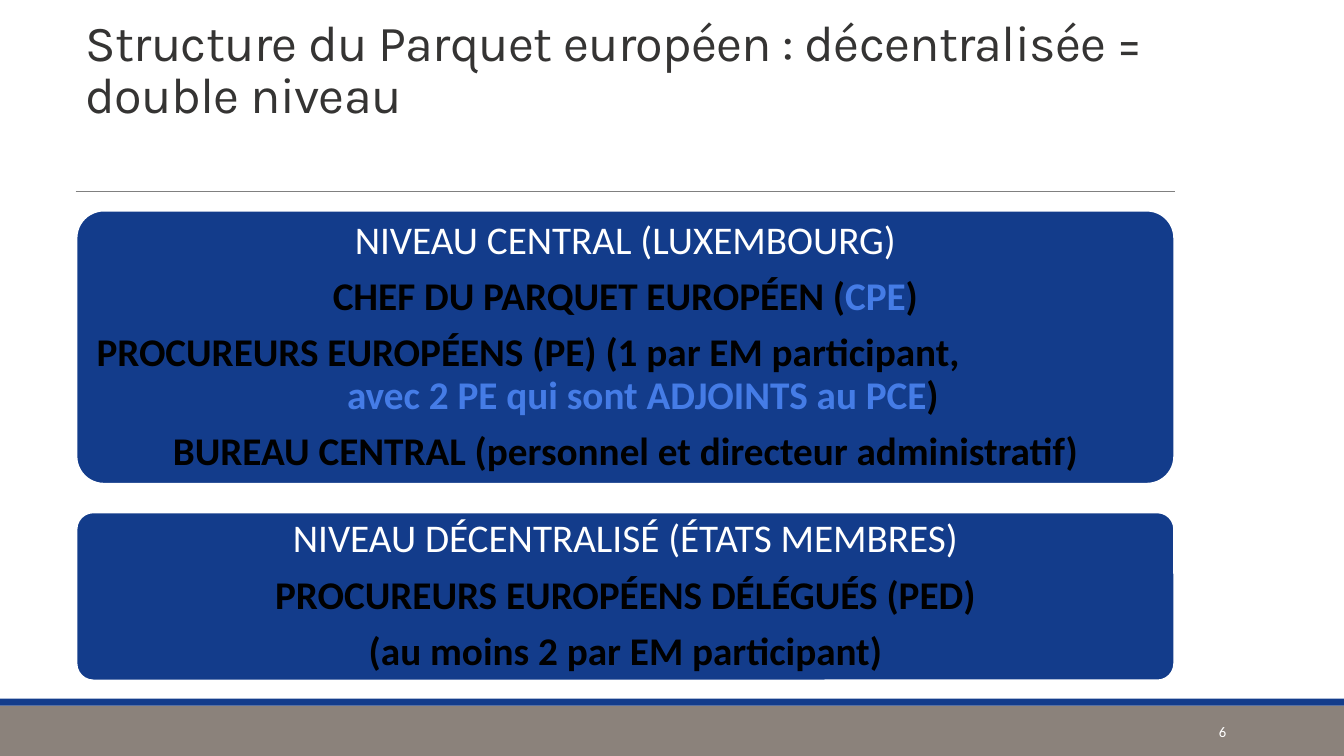
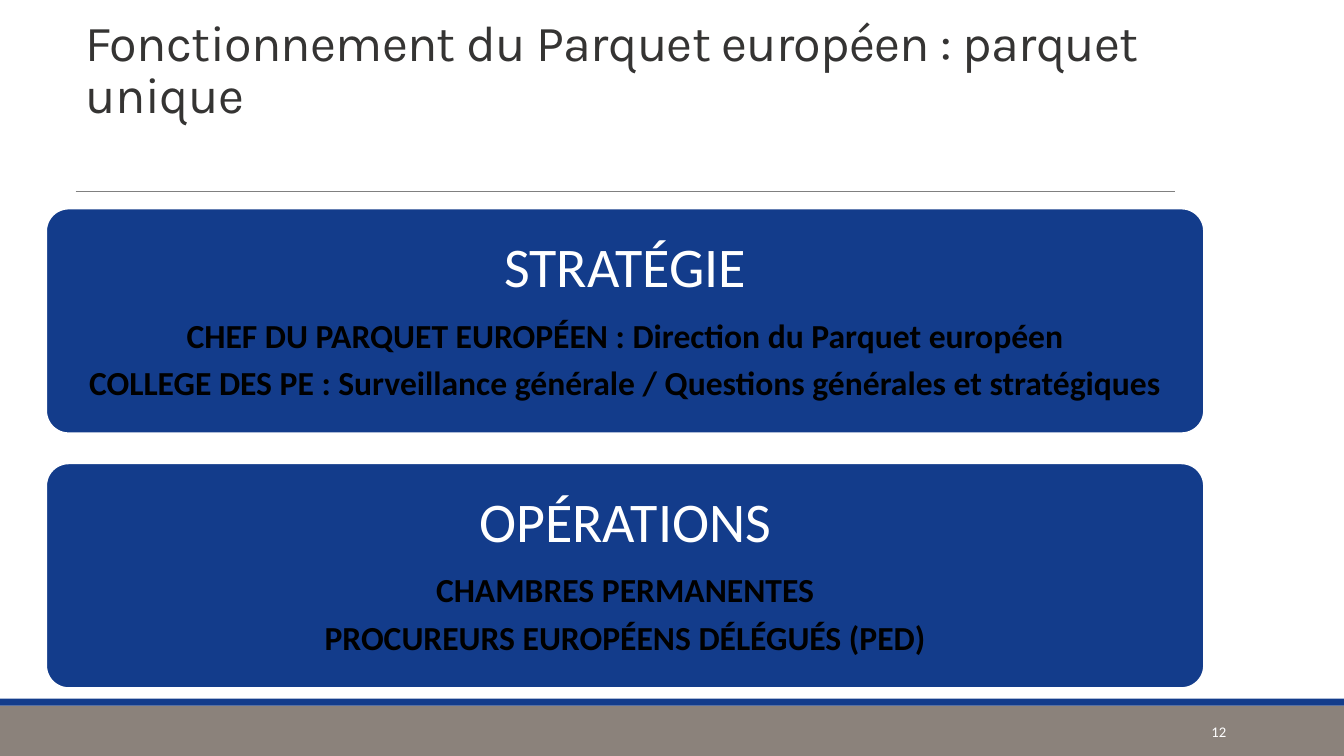
from lxml import etree
from pptx import Presentation
from pptx.dml.color import RGBColor
from pptx.enum import shapes, text
from pptx.oxml.ns import qn
from pptx.util import Pt

COLORS = {"blue": "133C8B", "taupe": "8B827B", "rule": "808080", "title": "353433",
          "white": "FFFFFF", "black": "000000", "accent": "457CE6"}
CENTER, LEFT, RIGHT = (text.PP_ALIGN.CENTER, text.PP_ALIGN.LEFT, text.PP_ALIGN.RIGHT)
WIDTH, HEIGHT = 960, 540


def color(name):
    return RGBColor.from_string(COLORS[name])


def add_run(paragraph, words, color_name, **font_values):
    run = paragraph.add_run()
    run.text = words
    run.font.color.rgb = color(color_name)
    for name, value in font_values.items():
        setattr(run.font, name, value)
    return run


# Panel lines are lists of (words, colour); the first line is the heading.
SLIDES = [
    {"title": "Structure du Parquet européen\u00a0: décentralisée = double niveau",
     "number": "6", "left": 54.7, "width": 784, "inset": 8.6,
     "heading_size": 28, "body_size": 28,
     "panels": [
         (150.5, 195, [
             [("NIVEAU CENTRAL (LUXEMBOURG)", "white")],
             [("CHEF DU PARQUET EUROPÉEN (", "black"), ("CPE", "accent"), (")", "black")],
             [("PROCUREURS EUROPÉENS (PE) (1 par EM participant,", "black")],
             [("avec 2 PE qui sont ADJOINTS au PCE", "accent"), (")", "black")],
             [("BUREAU CENTRAL (personnel et directeur administratif)", "black")]]),
         (366, 120, [
             [("NIVEAU DÉCENTRALISÉ (ÉTATS MEMBRES)", "white")],
             [("PROCUREURS EUROPÉENS DÉLÉGUÉS (PED)", "black")],
             [("(au moins 2 par EM participant)", "black")]])],
     # The third line of the first panel continues on the fourth.
     "overrides": {(0, 2): {"alignment": LEFT},
                   (0, 3): {"space_before": Pt(0), "indent": 25}}},
    {"title": "Fonctionnement du Parquet européen : parquet unique",
     "number": "12", "left": 33, "width": 827, "inset": 12,
     "heading_size": 40, "body_size": 24,
     "panels": [
         (149, 160.5, [
             [("STRATÉGIE", "white")],
             [("CHEF DU PARQUET EUROPÉEN\u00a0: Direction du Parquet européen", "black")],
             [("COLLEGE DES PE\u00a0: Surveillance générale / Questions générales et "
               "stratégiques", "black")]]),
         (331, 160.5, [
             [("OPÉRATIONS", "white")],
             [("CHAMBRES PERMANENTES", "black")],
             [("PROCUREURS EUROPÉENS DÉLÉGUÉS (PED)", "black")]])],
     "overrides": {}},
]

presentation = Presentation()
presentation.slide_width, presentation.slide_height = Pt(WIDTH), Pt(HEIGHT)
layout = presentation.slide_layouts[5]
slides = [presentation.slides.add_slide(layout) for _ in SLIDES]

# Shared decoration: built once, then moved to the layout
decorations = []
for top, height, fill in [(504, 36, "taupe"), (499, 5, "blue")]:
    band = slides[0].shapes.add_shape(
        shapes.MSO_SHAPE.RECTANGLE, Pt(0), Pt(top), Pt(WIDTH), Pt(height))
    band.shadow.inherit = False
    band.fill.solid()
    band.fill.fore_color.rgb = color(fill)
    band.line.fill.background()
    decorations.append(band)
rule = slides[0].shapes.add_connector(
    shapes.MSO_CONNECTOR.STRAIGHT, Pt(54), Pt(136.6), Pt(839), Pt(136.6))
rule.line.color.rgb = color("rule")
rule.line.width = Pt(0.5)
etree.SubElement(rule.element.spPr, qn("a:effectLst"))
decorations.append(rule)
for index, decoration in enumerate(decorations):
    decoration.element.xpath(".//p:cNvPr")[0].set("id", str(100 + index))
    layout.element.cSld.spTree.insert(2 + index, decoration.element)

for slide, content in zip(slides, SLIDES):
    title = slide.shapes.title
    title.left, title.top, title.width, title.height = Pt(54), Pt(18.7), Pt(785), Pt(114.5)
    frame = title.text_frame
    for name, value in {"word_wrap": True, "auto_size": text.MSO_AUTO_SIZE.NONE,
                        "vertical_anchor": text.MSO_ANCHOR.BOTTOM,
                        "margin_bottom": Pt(45)}.items():
        setattr(frame, name, value)
    paragraph = frame.paragraphs[0]
    paragraph.alignment = LEFT
    paragraph.line_spacing = 0.85
    run = add_run(paragraph, content["title"], "title", name="Karla", size=Pt(36))
    run.font._element.set("spc", "-50")

    for panel_index, (top, height, lines) in enumerate(content["panels"]):
        panel = slide.shapes.add_shape(
            shapes.MSO_SHAPE.ROUNDED_RECTANGLE,
            Pt(content["left"]), Pt(top), Pt(content["width"]), Pt(height))
        panel.adjustments[0] = 0.1
        panel.shadow.inherit = False
        panel.fill.solid()
        panel.fill.fore_color.rgb = color("blue")
        panel.line.color.rgb = color("white")
        panel.line.width = Pt(1.25)
        frame = panel.text_frame
        frame.word_wrap = True
        frame.vertical_anchor = text.MSO_ANCHOR.MIDDLE
        for side in ("left", "right", "top", "bottom"):
            setattr(frame, f"margin_{side}", Pt(content["inset"]))

        previous_size = 0
        for line_index, runs in enumerate(lines):
            is_heading = line_index == 0
            size = content["heading_size" if is_heading else "body_size"]
            paragraph = frame.paragraphs[0] if is_heading else frame.add_paragraph()
            values = {"alignment": CENTER, "line_spacing": 0.9,
                      "space_before": Pt(round(0.35 * previous_size)), "indent": 0}
            values.update(content["overrides"].get((panel_index, line_index), {}))
            indent = values.pop("indent")
            if indent:
                paragraph._p.get_or_add_pPr().set("marL", str(Pt(indent)))
            for name, value in values.items():
                setattr(paragraph, name, value)
            for words, color_name in runs:
                add_run(paragraph, words, color_name, name="Calibri", size=Pt(size),
                        bold=not is_heading)
            previous_size = size

    number = slide.shapes.add_textbox(Pt(780), Pt(508.5), Pt(103), Pt(28.5))
    number.text_frame.word_wrap = True
    number.text_frame.vertical_anchor = text.MSO_ANCHOR.MIDDLE
    paragraph = number.text_frame.paragraphs[0]
    paragraph.alignment = RIGHT
    add_run(paragraph, content["number"], "white", name="Calibri", size=Pt(10.5))

presentation.save("out.pptx")
